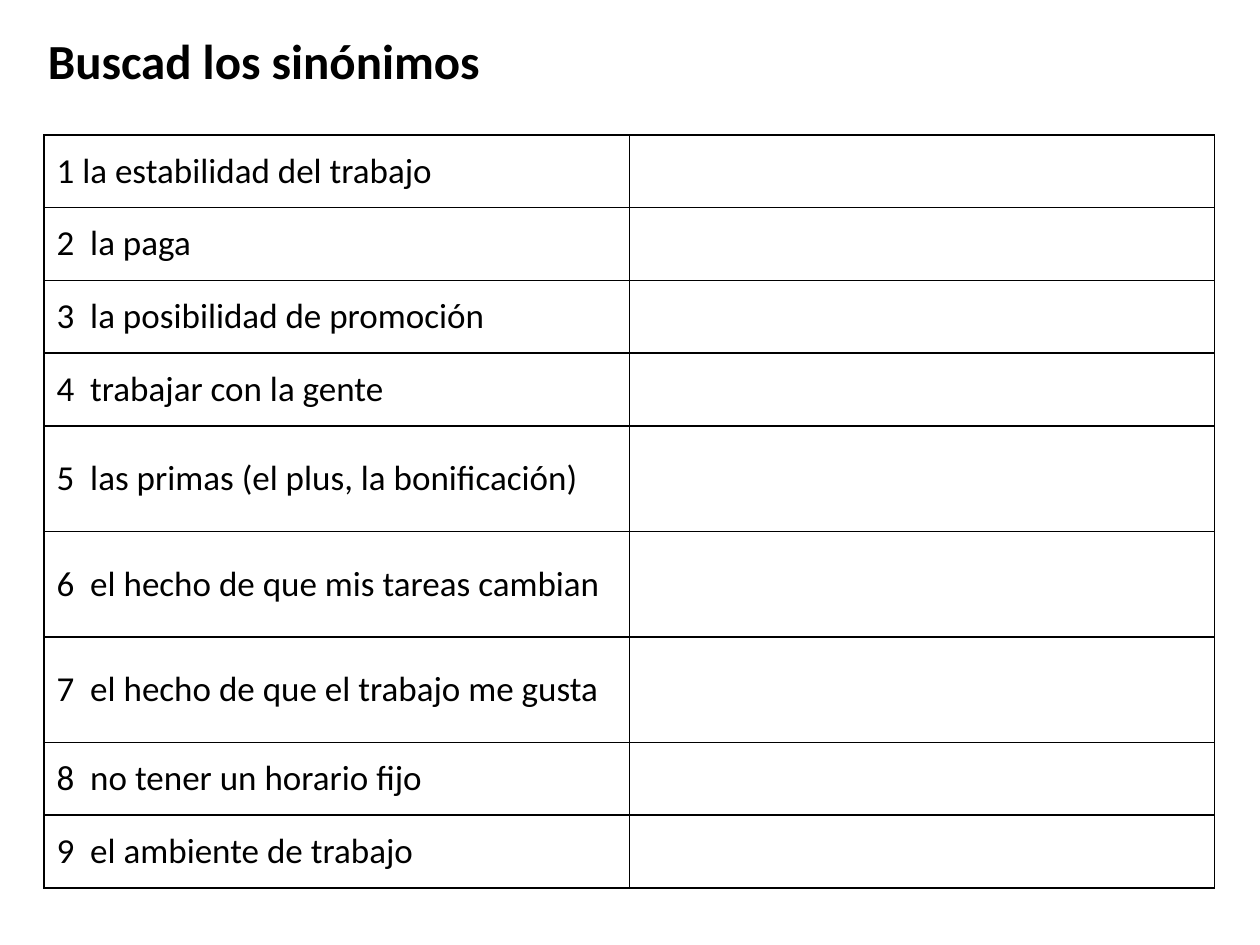
import pptx
import pptx.dml.color
import pptx.enum.text
import pptx.oxml
import pptx.oxml.ns
import pptx.util
from lxml import etree

COLORS = {"ink": "000000", "paper": "FFFFFF"}
FONT = "Calibri"
PAGE_WIDTH, PAGE_HEIGHT = 10, 7.5
TITLE_BOX = (0.28, 0.19, 8.74, 0.57)
TABLE_BOX = (0.35, 1.07, 9.29, 5.98)
TALL_ROW_RATIO = 1.45
TALL_ROWS = {4, 5, 6}
PHRASES = [
    "1 la estabilidad del trabajo",
    "2  la paga",
    "3  la posibilidad de promoción",
    "4  trabajar con la gente",
    "5  las primas (el plus, la bonificación)",
    "6  el hecho de que mis tareas cambian",
    "7  el hecho de que el trabajo me gusta",
    "8  no tener un horario fijo",
    "9  el ambiente de trabajo",
]


def color(name):
    return pptx.dml.color.RGBColor.from_string(COLORS[name])


def format_paragraph(para, size, bold=False):
    para.alignment = pptx.enum.text.PP_ALIGN.LEFT
    para.font.name = FONT
    para.font.size = pptx.util.Pt(size)
    para.font.bold = bold
    para.font.color.rgb = color("ink")


def add_borders(cell, width=1):
    properties = cell._tc.get_or_add_tcPr()
    for index, side in enumerate(("lnL", "lnR", "lnT", "lnB")):
        line = etree.Element(pptx.oxml.ns.qn(f"a:{side}"), w=str(pptx.util.Pt(width)))
        fill = etree.SubElement(line, pptx.oxml.ns.qn("a:solidFill"))
        etree.SubElement(fill, pptx.oxml.ns.qn("a:srgbClr"), val=COLORS["ink"])
        properties.insert(index, line)


def place_title(page, box, text):
    title = page.shapes.title
    title.left, title.top, title.width, title.height = map(pptx.util.Inches, box)
    frame = title.text_frame
    frame.text = text
    frame.word_wrap = True
    frame.auto_size = pptx.enum.text.MSO_AUTO_SIZE.SHAPE_TO_FIT_TEXT
    frame.vertical_anchor = pptx.enum.text.MSO_ANCHOR.TOP
    format_paragraph(frame.paragraphs[0], 28, bold=True)


def place_synonym_table(page, box, phrases):
    """Add phrases on the left and blank answer cells on the right."""
    left, top, width, height = map(pptx.util.Inches, box)
    table = page.shapes.add_table(len(phrases), 2, left, top, width, height).table
    table.first_row = False
    table.horz_banding = False
    weights = [TALL_ROW_RATIO if row in TALL_ROWS else 1 for row in range(len(phrases))]
    for row, weight in zip(table.rows, weights):
        row.height = int(height * weight / sum(weights))
    for row, phrase in enumerate(phrases):
        table.cell(row, 0).text = phrase
    for cell in table.iter_cells():
        cell.vertical_anchor = pptx.enum.text.MSO_ANCHOR.MIDDLE
        cell.fill.solid()
        cell.fill.fore_color.rgb = color("paper")
        add_borders(cell)
        format_paragraph(cell.text_frame.paragraphs[0], 20)


def main():
    deck = pptx.Presentation()
    deck.slide_width = pptx.util.Inches(PAGE_WIDTH)
    deck.slide_height = pptx.util.Inches(PAGE_HEIGHT)
    page = deck.slides.add_slide(deck.slide_layouts.get_by_name("Title Only"))
    place_synonym_table(page, TABLE_BOX, PHRASES)
    place_title(page, TITLE_BOX, "Buscad los sinónimos")
    deck.save("out.pptx")


if __name__ == "__main__":
    main()
